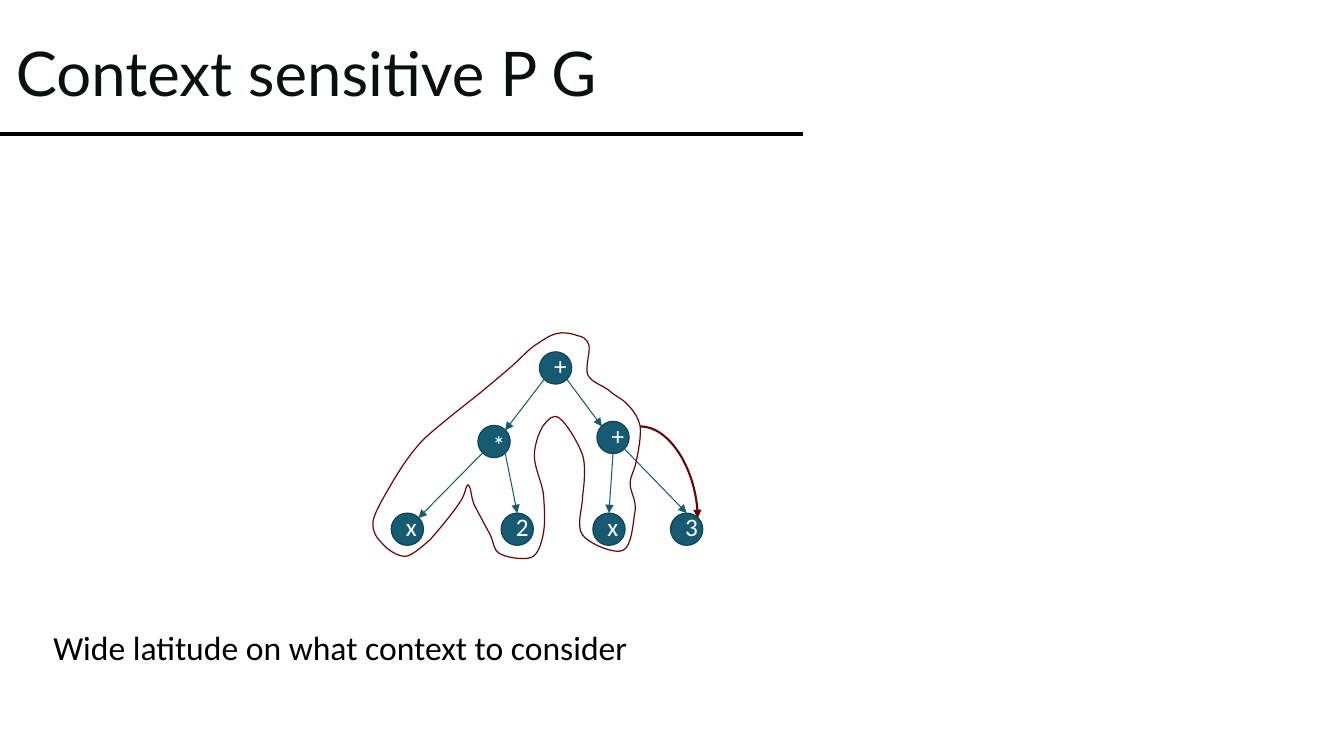
from lxml.etree import SubElement
from pptx import Presentation
from pptx.dml.color import RGBColor
from pptx.enum.shapes import MSO_CONNECTOR as LINK, MSO_SHAPE as SHAPE
from pptx.enum.text import MSO_ANCHOR as ANCHOR, PP_ALIGN as ALIGN
from pptx.oxml.ns import qn
from pptx.util import Pt

PX = 9144  # 100 px to the inch
DIAMETER, RADIUS, DIAGONAL = 32, 16, 11

# Points around a node, as offsets from its centre
SITES = {
    "top": (0, -RADIUS),
    "bottom": (0, RADIUS),
    "top left": (-DIAGONAL, -DIAGONAL),
    "top right": (DIAGONAL, -DIAGONAL),
    "bottom left": (-DIAGONAL, DIAGONAL),
    "bottom right": (DIAGONAL, DIAGONAL),
}

# name: (symbol, left, top, top inset)
NODES = {
    "root": ("+", 535, 349, 0),
    "sum": ("+", 592, 418, 0),
    "product": ("*", 474, 422, 10),
    "product x": ("x", 388, 509, 0),
    "product 2": ("2", 497, 509, 0),
    "sum x": ("x", 588, 509, 0),
    "sum 3": ("3", 665, 509, 0),
}

EDGES = [
    ("product", "bottom left", "product x", "top right"),
    ("product", "bottom right", "product 2", "top"),
    ("sum", "bottom", "sum x", "top"),
    ("sum", "bottom right", "sum 3", "top"),
    ("root", "bottom left", "product", "top right"),
    ("root", "bottom right", "sum", "top left"),
]

# Each row is one Bézier segment: two control points and an end point
CONTEXT_START = (583, 372)
CONTEXT_CURVES = [
    ((580, 364), (586, 349), (584, 342)),
    ((582, 336), (578, 334), (573, 333)),
    ((567, 331), (559, 329), (552, 331)),
    ((544, 333), (538, 338), (530, 343)),
    ((523, 348), (517, 355), (508, 363)),
    ((499, 371), (476, 390), (476, 390)),
    ((461, 402), (435, 422), (420, 436)),
    ((406, 451), (398, 464), (390, 477)),
    ((382, 491), (372, 507), (370, 517)),
    ((369, 528), (374, 534), (379, 539)),
    ((384, 545), (394, 552), (402, 552)),
    ((409, 551), (418, 543), (427, 535)),
    ((435, 526), (449, 509), (455, 500)),
    ((462, 491), (462, 481), (464, 481)),
    ((467, 481), (467, 492), (470, 500)),
    ((474, 508), (481, 521), (486, 530)),
    ((490, 538), (489, 545), (495, 549)),
    ((502, 553), (519, 556), (527, 553)),
    ((534, 550), (537, 539), (539, 529)),
    ((541, 518), (540, 503), (539, 490)),
    ((537, 477), (530, 464), (530, 452)),
    ((530, 441), (535, 428), (539, 422)),
    ((544, 416), (549, 410), (555, 415)),
    ((562, 420), (574, 440), (578, 452)),
    ((582, 465), (578, 491), (578, 491)),
    ((578, 504), (571, 522), (578, 531)),
    ((585, 540), (610, 550), (618, 546)),
    ((627, 542), (628, 517), (630, 506)),
    ((631, 495), (625, 488), (625, 480)),
    ((625, 472), (629, 468), (631, 458)),
    ((633, 449), (636, 433), (635, 423)),
    ((633, 414), (628, 407), (623, 402)),
    ((618, 396), (612, 394), (606, 389)),
    ((600, 383), (587, 380), CONTEXT_START),
]


def px(*lengths):
    return [length * PX for length in lengths]


def color(hex_string):
    return RGBColor.from_string(hex_string)


def set_values(target, values):
    for name, value in values.items():
        setattr(target, name, value)


def set_line(shape, hex_string, width):
    shape.line.color.rgb = color(hex_string)
    shape.line.width = Pt(width)


def write(shape, text, font, size, hex_string, frame_format, paragraph_format):
    set_values(shape.text_frame, frame_format)
    paragraph = shape.text_frame.paragraphs[0]
    set_values(paragraph, paragraph_format)
    run = paragraph.add_run()
    run.text = text
    set_values(run.font, {"name": font, "size": Pt(size)})
    run.font.color.rgb = color(hex_string)


def add_node(shapes, symbol, left, top, inset_top):
    node = shapes.add_shape(SHAPE.OVAL, *px(left, top, DIAMETER, DIAMETER))
    node.shadow.inherit = False
    node.fill.solid()
    node.fill.fore_color.rgb = color("175B73")
    set_line(node, "114355", 0.85)
    frame_format = {"margin_top": inset_top * PX, "vertical_anchor": ANCHOR.MIDDLE}
    write(node, symbol, "Calibri", 18, "FFFFFF", frame_format, {"alignment": ALIGN.CENTER})
    return node


def site_of(name, site):
    """Return the px position of a named point on a node's outline."""
    _, left, top, _ = NODES[name]
    dx, dy = SITES[site]
    return left + RADIUS + dx, top + RADIUS + dy


def add_link(shapes, start, end, hex_string, width, kind=LINK.STRAIGHT, arrow=True):
    link = shapes.add_connector(kind, *px(*start, *end))
    set_line(link, hex_string, width)
    if arrow:
        SubElement(link.line._get_or_add_ln(), qn("a:tailEnd"), type="triangle")
    SubElement(link._element.spPr, qn("a:effectLst"))
    return link


def add_edge(shapes, nodes, parent, parent_site, child, child_site):
    edge = add_link(shapes, site_of(parent, parent_site), site_of(child, child_site),
                    "175B73", 0.75)
    if child_site == "top":
        edge.end_connect(nodes[child], 0)


def add_context_arrow(shapes):
    arrow = add_link(shapes, (635, 423), site_of("sum 3", "top right"),
                     "660505", 1.5, LINK.CURVE)
    arrow._element.spPr.find(qn("a:prstGeom")).set("prst", "curvedConnector2")


def add_context_outline(shapes):
    """Draw the closed outline, turning each three line steps into one Bézier."""
    builder = shapes.build_freeform(*CONTEXT_START, scale=PX)
    builder.add_line_segments([point for curve in CONTEXT_CURVES for point in curve])
    outline = builder.convert_to_shape()
    outline.shadow.inherit = False
    outline.fill.background()
    set_line(outline, "660505", 0.85)
    steps = list(outline._element.iter(qn("a:lnTo")))
    for curve_steps in zip(steps[::3], steps[1::3], steps[2::3]):
        curve = curve_steps[0].makeelement(qn("a:cubicBezTo"))
        curve_steps[0].addprevious(curve)
        for step in curve_steps:
            curve.append(step[0])
            step.getparent().remove(step)


def main():
    deck = Presentation()
    set_values(deck, {"slide_width": 1333 * PX, "slide_height": 750 * PX})
    shapes = deck.slides.add_slide(deck.slide_layouts[6]).shapes

    add_link(shapes, (0, 133), (796, 133), "000000", 2.25, arrow=False)
    title = shapes.add_textbox(*px(6, 3, 751, 145))
    write(title, "Context sensitive P G", "Lato", 44, "08110B",
          {"word_wrap": True, "vertical_anchor": ANCHOR.MIDDLE}, {"line_spacing": 0.9})

    nodes = {name: add_node(shapes, *node) for name, node in NODES.items()}
    for edge in EDGES:
        add_edge(shapes, nodes, *edge)

    remark = shapes.add_textbox(*px(43, 617, 595, 50))
    write(remark, "Wide latitude on what context to consider", "Calibri", 24, "000000",
          {"word_wrap": False}, {})
    add_context_arrow(shapes)
    add_context_outline(shapes)
    deck.save("out.pptx")


if __name__ == "__main__":
    main()
